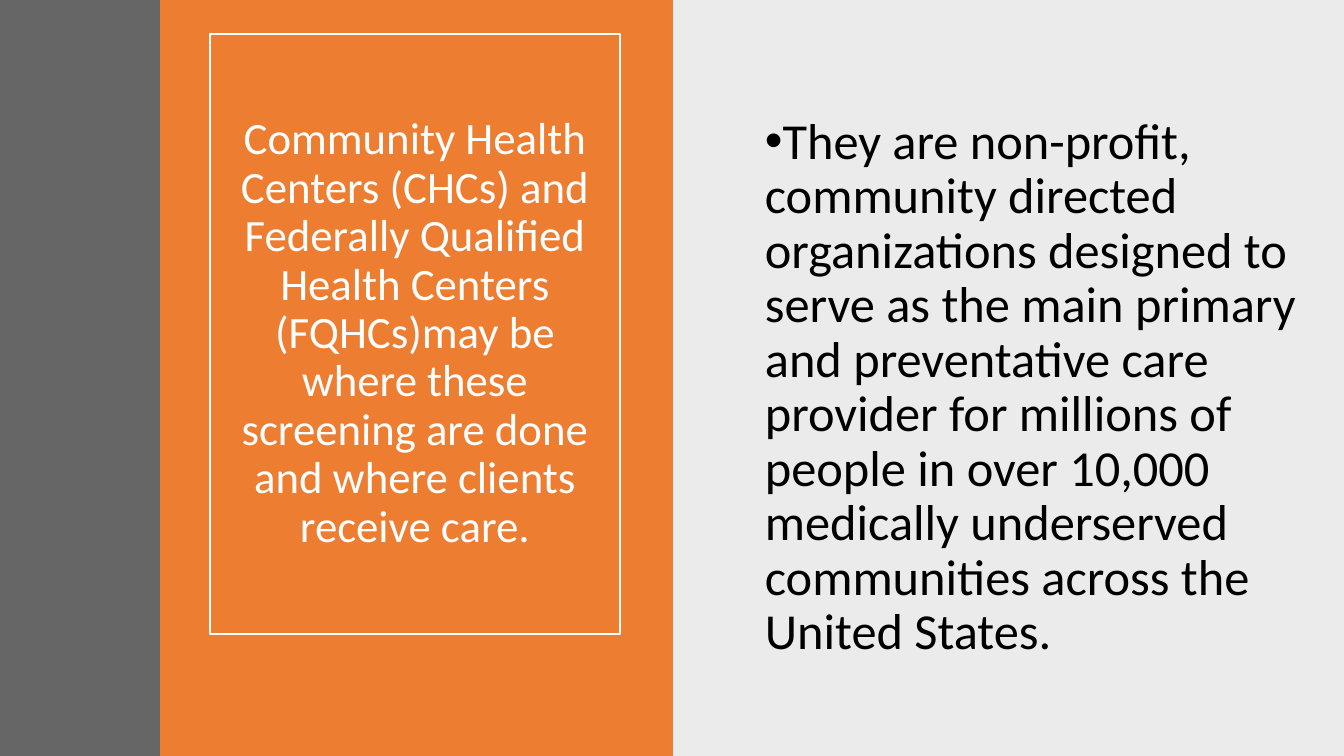
import lxml.etree
import pptx
import pptx.dml.color
import pptx.enum.shapes
import pptx.enum.text
import pptx.oxml.ns
import pptx.util

SCALE = 914400 / 100.8
WIDE, HIGH = 1344, 756
COLORS = {"white": "FFFFFF", "black": "000000", "orange": "ED7D31", "gray": "404040"}
TITLE = (
    "Community Health Centers (CHCs) and Federally Qualified Health Centers "
    "(FQHCs)may be where these screening are done and where clients receive care."
)
BODY = (
    "They are non-profit, community directed organizations designed to serve as "
    "the main primary and preventative care provider for millions of people in "
    "over 10,000 medically underserved communities across the United States."
)


def px(count):
    return pptx.util.Emu(round(count * SCALE))


def rgb(name):
    return pptx.dml.color.RGBColor.from_string(COLORS[name])


def node(parent, tag, **attrs):
    return lxml.etree.SubElement(parent, pptx.oxml.ns.qn(tag), attrs)


def panel(slide, left, width, color, alpha=100):
    """Add a full-height band; alpha is its opacity in percent."""
    kind = pptx.enum.shapes.MSO_SHAPE.RECTANGLE
    band = slide.shapes.add_shape(kind, px(left), px(0), px(width), px(HIGH))
    band.shadow.inherit = False
    band.fill.solid()
    band.fill.fore_color.rgb = rgb(color)
    band.line.fill.background()
    if alpha < 100:
        tint = band._element.spPr.find(".//" + pptx.oxml.ns.qn("a:srgbClr"))
        node(tint, "a:alpha", val=str(alpha * 1000))


def write(shape, text, size, color, align, anchor, after=0, bullet=None):
    frame = shape.text_frame
    frame.word_wrap = True
    frame.auto_size = pptx.enum.text.MSO_AUTO_SIZE.NONE
    frame.vertical_anchor = anchor
    para = frame.paragraphs[0]
    para.alignment = align
    para.line_spacing = 0.9
    para.space_after = pptx.util.Pt(after)
    run = para.add_run()
    run.text = text
    run.font.name = "Calibri"
    run.font.size = pptx.util.Pt(size)
    run.font.color.rgb = rgb(color)
    if bullet:
        props = para._p.get_or_add_pPr()
        props.set("marL", "0")
        props.set("indent", str(-pptx.util.Inches(0.25)))
        node(props, "a:buFont", typeface="Arial")
        node(props, "a:buChar", char=bullet)


def head(slide):
    """Place the framed title above the orange band."""
    title = slide.shapes.title
    title.left, title.top, title.width, title.height = map(px, (210, 34, 410, 600))
    title.line.color.rgb = rgb("white")
    title.line.width = pptx.util.Pt(2)
    slide.shapes._spTree.append(title._element)
    write(title, TITLE, 32, "white", pptx.enum.text.PP_ALIGN.CENTER,
          pptx.enum.text.MSO_ANCHOR.MIDDLE)


def main():
    deck = pptx.Presentation()
    deck.slide_width, deck.slide_height = px(WIDE), px(HIGH)
    slide = deck.slides.add_slide(deck.slide_layouts[5])
    panel(slide, 672, 672, "black", alpha=8)
    panel(slide, 160, 513, "orange")
    head(slide)
    panel(slide, 0, 160, "gray", alpha=80)
    body = slide.shapes.add_textbox(px(755), px(111), px(557), px(281))
    write(body, BODY, 36, "black", pptx.enum.text.PP_ALIGN.LEFT,
          pptx.enum.text.MSO_ANCHOR.TOP, after=6, bullet="•")
    deck.save("out.pptx")


if __name__ == "__main__":
    main()
